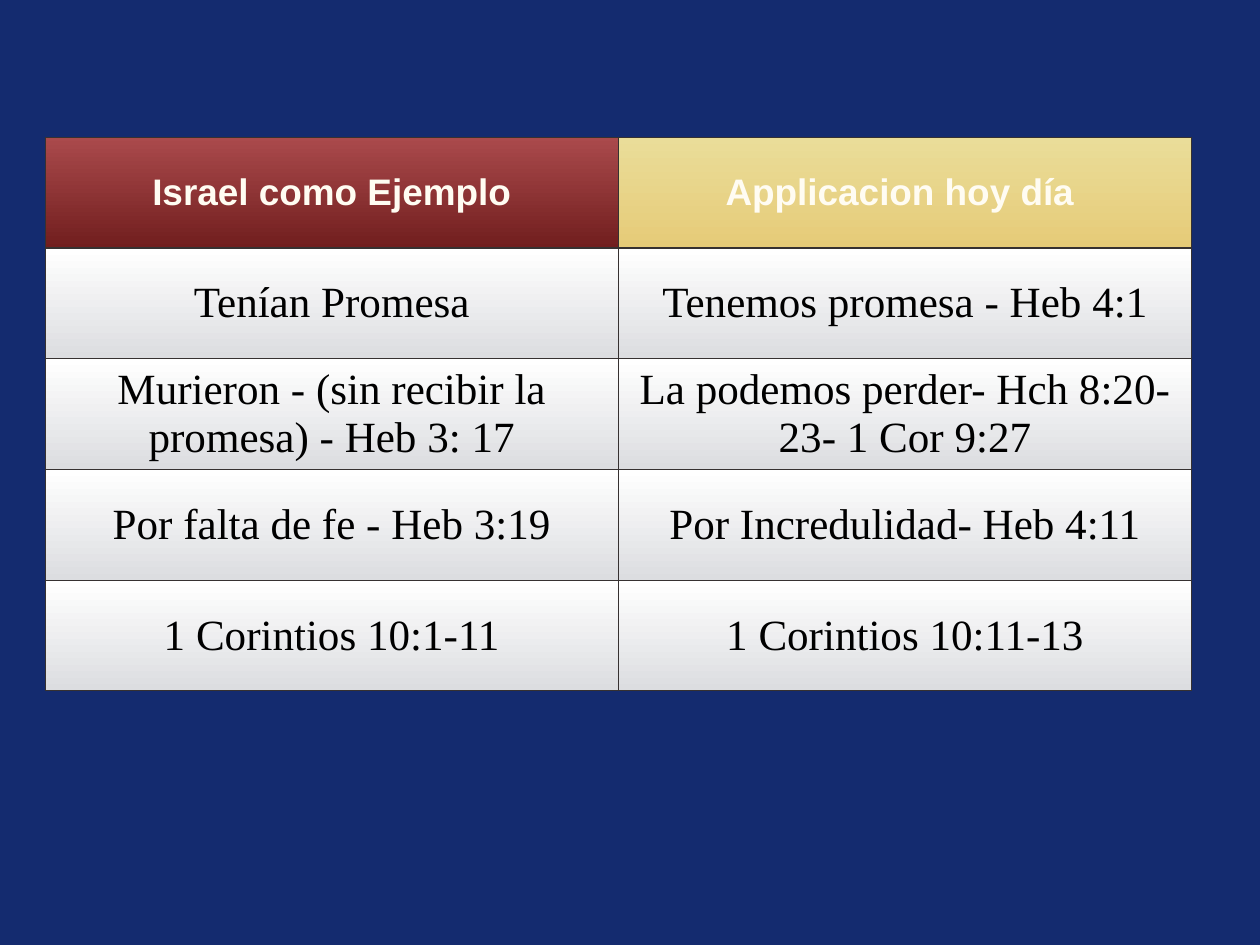
import lxml.etree
import pptx
import pptx.dml.color
import pptx.enum.text
import pptx.oxml.ns
import pptx.util

Inches = pptx.util.Inches
RGBColor = pptx.dml.color.RGBColor
qn = pptx.oxml.ns.qn

NAVY = RGBColor(0x14, 0x2B, 0x6F)
CREAM = RGBColor(0xFF, 0xFC, 0xF2)
BLACK = RGBColor(0x00, 0x00, 0x00)
BORDER = RGBColor(0x36, 0x31, 0x31)
RED = (RGBColor(0xAA, 0x4A, 0x4C), RGBColor(0x71, 0x1E, 0x1E))
GOLD = (RGBColor(0xEA, 0xDD, 0x99), RGBColor(0xE6, 0xCB, 0x78))
SILVER = (RGBColor(0xFF, 0xFF, 0xFF), RGBColor(0xDC, 0xDD, 0xE0))

ROWS = [
    ("Israel como Ejemplo", "Applicacion hoy día "),
    ("Tenían Promesa", "Tenemos promesa - Heb 4:1"),
    ("Murieron - (sin recibir la promesa) - Heb 3: 17",
     "La podemos perder- Hch 8:20-23- 1 Cor 9:27"),
    ("Por falta de fe - Heb 3:19", "Por Incredulidad- Heb 4:11"),
    ("1 Corintios 10:1-11", "1 Corintios 10:11-13"),
]


def add_borders(cell):
    properties = cell._tc.get_or_add_tcPr()
    for position, side in enumerate(("lnL", "lnR", "lnT", "lnB")):
        line = lxml.etree.Element(qn("a:" + side), w=str(pptx.util.Pt(1)))
        fill = lxml.etree.SubElement(line, qn("a:solidFill"))
        color = lxml.etree.SubElement(fill, qn("a:srgbClr"), val=str(BORDER))
        lxml.etree.SubElement(color, qn("a:alpha"), val="90000")
        properties.insert(position, line)


deck = pptx.Presentation()
deck.slide_width = Inches(14.22)
deck.slide_height = Inches(10.67)
page = deck.slides.add_slide(deck.slide_layouts[6])
page.background.fill.solid()
page.background.fill.fore_color.rgb = NAVY

table = page.shapes.add_table(
    len(ROWS), 2, Inches(0.51), Inches(1.55), Inches(12.94), Inches(6.25)
).table
table.horz_banding = False
for column in table.columns:
    column.width = Inches(6.47)

for row_index, texts in enumerate(ROWS):
    table.rows[row_index].height = Inches(1.25)
    is_header = row_index == 0
    gradients = (RED, GOLD) if is_header else (SILVER, SILVER)
    for column_index, text in enumerate(texts):
        cell = table.cell(row_index, column_index)
        cell.vertical_anchor = pptx.enum.text.MSO_ANCHOR.MIDDLE
        cell.margin_left = cell.margin_right = Inches(0.06)
        cell.margin_top = cell.margin_bottom = Inches(0.06)

        cell.fill.gradient()
        cell.fill.gradient_angle = 270
        for stop, color in zip(cell.fill.gradient_stops, gradients[column_index]):
            stop.color.rgb = color
        add_borders(cell)

        cell.text = text
        para = cell.text_frame.paragraphs[0]
        para.alignment = pptx.enum.text.PP_ALIGN.CENTER
        para.font.name = "Arial" if is_header else "Times New Roman"
        para.font.size = pptx.util.Pt(30 if is_header else 35)
        para.font.bold = is_header
        para.font.color.rgb = CREAM if is_header else BLACK

deck.save("out.pptx")
